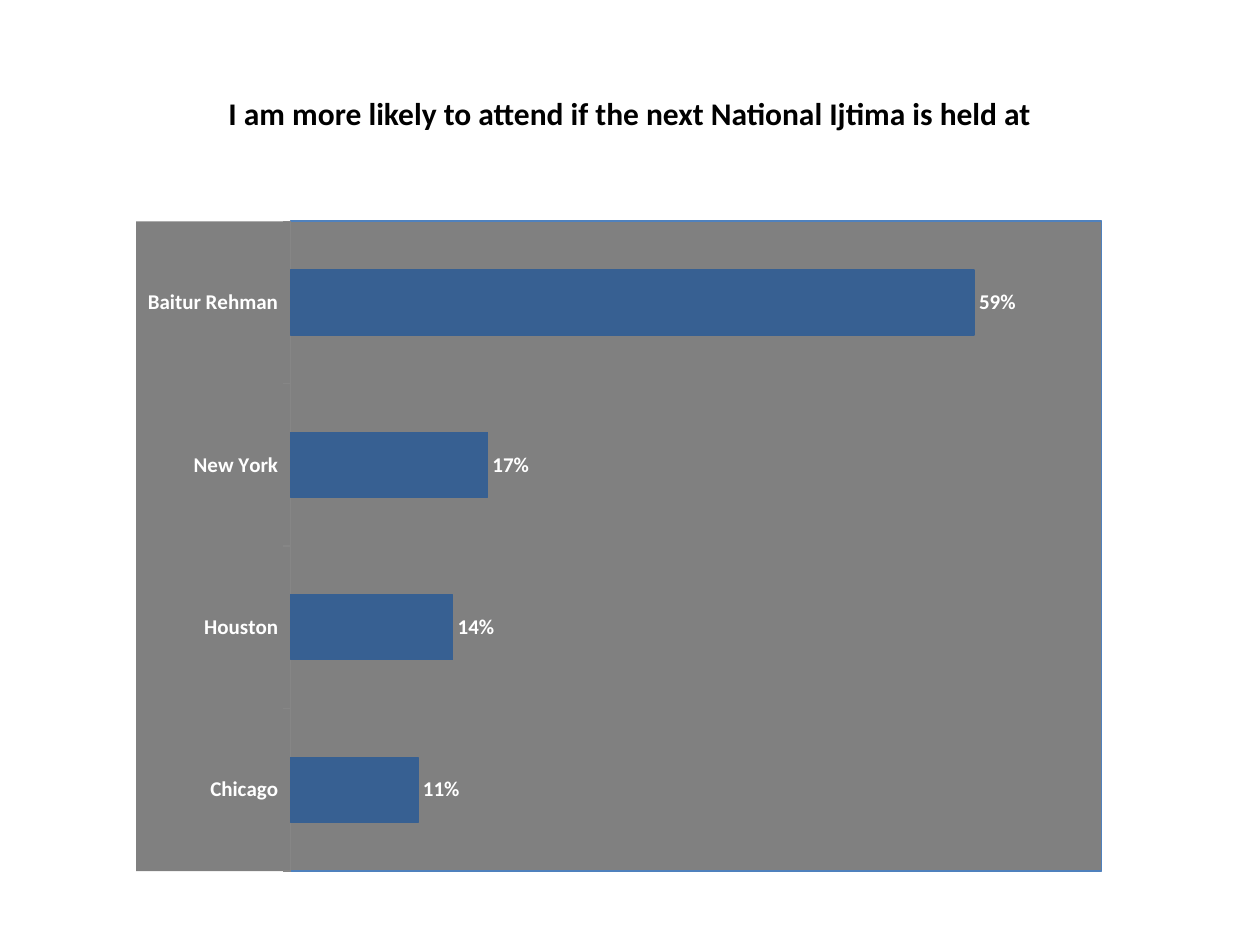
from lxml import etree
from pptx import Presentation
from pptx import util as u
from pptx.chart import data as cd
from pptx.dml import color as co
from pptx.enum import chart as ch, text as tx
from pptx.oxml import ns

HUES = {"ink": "000000", "text": "FFFFFF", "back": "808080",
        "bar": "376092", "edge": "4F81BD", "axis": "868686"}
VOTES = {"Chicago": 0.11, "Houston": 0.14, "New York": 0.17, "Baitur Rehman": 0.59}
PLOT = {"x": 0.16, "y": 0, "w": 0.84, "h": 1}


def rgb(name):
    return co.RGBColor.from_string(HUES[name])


def style(item, **values):
    for key, value in values.items():
        setattr(item, key, value)


def set_font(font, size, hue):
    style(font, name="Calibri", size=u.Pt(size), bold=True)
    font.color.rgb = rgb(hue)


def make_fill(edge=None):
    line = "<a:noFill/>"
    if edge:
        line = f'<a:solidFill><a:srgbClr val="{HUES[edge]}"/></a:solidFill>'
    return etree.fromstring(
        f'<c:spPr {ns.nsdecls("c", "a")}><a:solidFill><a:srgbClr val="{HUES["back"]}"/>'
        f'</a:solidFill><a:ln w="12700">{line}</a:ln></c:spPr>')


def make_frame():
    modes = "".join(f'<c:{side}Mode val="edge"/>' for side in "xy")
    sizes = "".join(f'<c:{key} val="{value}"/>' for key, value in PLOT.items())
    return etree.fromstring(
        f'<c:layout {ns.nsdecls("c")}><c:manualLayout><c:layoutTarget val="inner"/>'
        f'{modes}{sizes}</c:manualLayout></c:layout>')


def add_title(slide, box):
    frame = slide.shapes.add_textbox(*box).text_frame
    style(frame, word_wrap=True, vertical_anchor=tx.MSO_ANCHOR.MIDDLE)
    para = frame.paragraphs[0]
    para.alignment = tx.PP_ALIGN.CENTER
    run = para.add_run()
    run.text = "I am more likely to attend if the next National Ijtima is held at"
    set_font(run.font, 18, "ink")


def add_bars(slide, box):
    data = cd.CategoryChartData(number_format="0%")
    data.categories = list(VOTES)
    data.add_series("Series 1", list(VOTES.values()))
    chart = slide.shapes.add_chart(ch.XL_CHART_TYPE.BAR_CLUSTERED, *box, data).chart
    style(chart, has_title=False, has_legend=False)
    set_font(chart.font, 12, "text")

    style(chart.value_axis, visible=False, minimum_scale=0, maximum_scale=0.7,
          has_major_gridlines=False)
    axis = chart.category_axis
    style(axis, major_tick_mark=ch.XL_TICK_MARK.OUTSIDE,
          minor_tick_mark=ch.XL_TICK_MARK.NONE)
    axis.format.line.color.rgb = rgb("axis")

    plot = chart.plots[0]
    style(plot, gap_width=150, vary_by_categories=False, has_data_labels=True)
    labels = plot.data_labels
    style(labels, show_value=True, number_format="0%", number_format_is_linked=False,
          position=ch.XL_LABEL_POSITION.OUTSIDE_END)
    set_font(labels.font, 12, "text")

    look = plot.series[0].format
    look.fill.solid()
    look.fill.fore_color.rgb = rgb("bar")
    look.line.color.rgb = rgb("bar")
    look.line.width = u.Pt(0.75)

    root = chart.element
    area = root.find(".//" + ns.qn("c:plotArea"))
    for old in area.findall(ns.qn("c:layout")):
        area.remove(old)
    area.insert(0, make_frame())
    area.append(make_fill("edge"))
    root.find(ns.qn("c:chart")).addnext(make_fill())


def main():
    deck = Presentation()
    style(deck, slide_width=u.Inches(10), slide_height=u.Inches(7.5))
    slide = deck.slides.add_slide(deck.slide_layouts[6])
    add_title(slide, [u.Inches(n) for n in (0.5, 0.55, 9, 0.7)])
    add_bars(slide, [u.Inches(n) for n in (1.08, 1.75, 7.67, 5.17)])
    deck.save("out.pptx")


if __name__ == "__main__":
    main()
